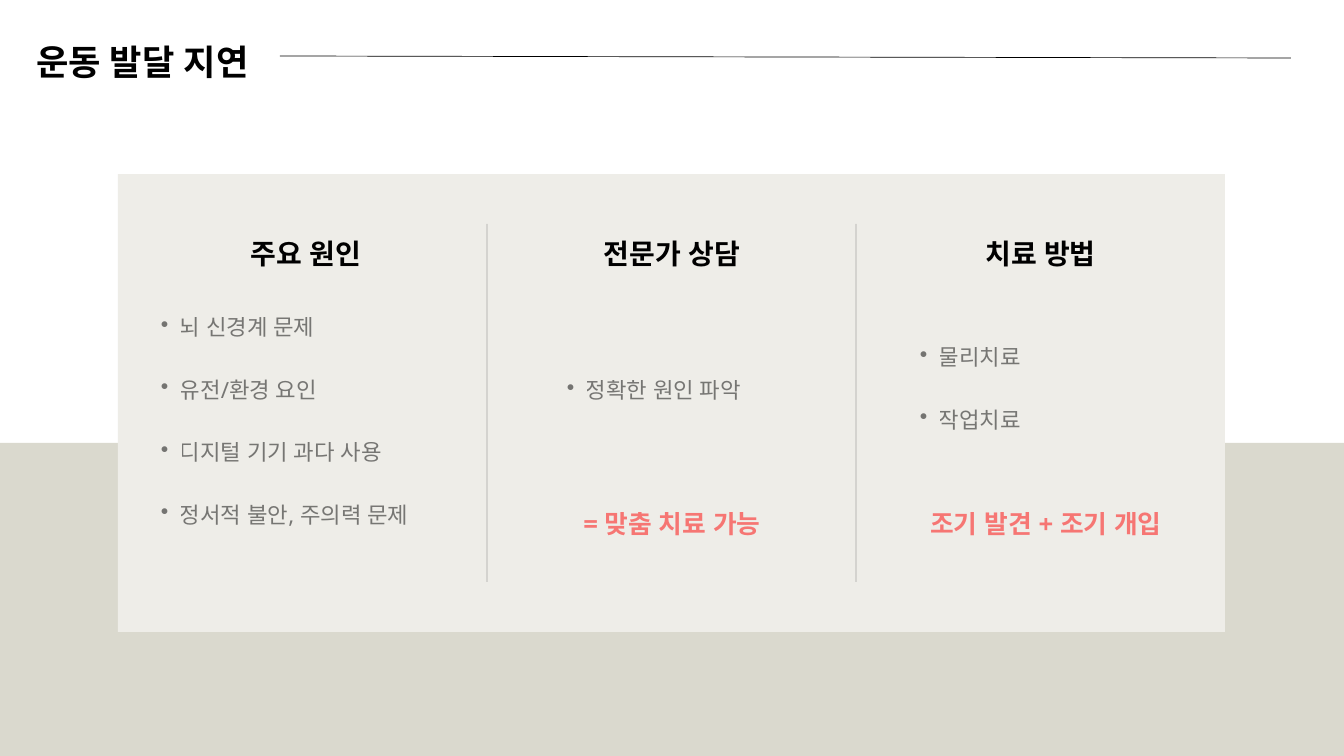
from lxml import etree
from pptx import Presentation
from pptx.dml.color import RGBColor
from pptx.enum.shapes import MSO_CONNECTOR, MSO_SHAPE
from pptx.enum.text import MSO_ANCHOR, MSO_AUTO_SIZE, PP_ALIGN
from pptx.oxml.ns import qn
from pptx.util import Pt

LEFT, MID = PP_ALIGN.LEFT, PP_ALIGN.CENTER
TOP, GROW = MSO_ANCHOR.TOP, MSO_AUTO_SIZE.SHAPE_TO_FIT_TEXT
RECT, LINE = MSO_SHAPE.RECTANGLE, MSO_CONNECTOR.STRAIGHT

# Content: each part holds its left, width and words; lists also hold a top
TITLE = "운동 발달 지연"
COLS = [
    {"head": (190, 232, "주요 원인"),
     "list": (142, 309, 343, ["뇌 신경계 문제", "유전/환경 요인",
                              "디지털 기기 과다 사용", "정서적 불안, 주의력 문제"])},
    {"head": (591, 162, "전문가 상담"),
     "list": (548, 372, 395, ["정확한 원인 파악"]),
     "gain": (516, 312, "= 맞춤 치료 가능")},
    {"head": (943, 195, "치료 방법"),
     "list": (901, 339, 368, ["물리치료", "작업치료"]),
     "gain": (890, 312, "조기 발견 + 조기 개입")},
]

# Theme: type styles are size, line pitch, colour, opacity, bold, alignment
THEME = {
    "font": "Noto Sans", "band": "DAD9CE", "card": "EEEDE8", "line": "000000",
    "title": (37.7, 52.8, "000000", 100, True, LEFT),
    "head": (30, 42, "000000", 100, True, MID),
    "list": (23.9, 33.5, "000000", 50, False, LEFT),
    "gain": (27.6, 38.6, "FF0000", 50, True, MID),
}

# Layout in px
WIDE, HIGH = 1344, 756
BAND_Y = 443
CARD = (118, 174, 1107, 458)
PAD = 50
HEAD_Y, HEAD_H = 231, 38
GAIN_Y, GAIN_H = 503, 34
INDENT, HANG = 38, 19


def px(num):
    return round(num * 914400 / 67.2)


def fade(fill, alpha):
    if alpha < 100:
        tint = fill.find(".//" + qn("a:srgbClr"))
        etree.SubElement(tint, qn("a:alpha"), val=str(alpha * 1000))


def block(box, tone):
    shape = slide.shapes.add_shape(RECT, *map(px, box))
    shape.shadow.inherit = False
    shape.fill.solid()
    shape.fill.fore_color.rgb = RGBColor.from_string(tone)
    shape.line.fill.background()


def rule(ends, alpha=100):
    line = slide.shapes.add_connector(LINE, *map(px, ends))
    line.line.width = Pt(0.75)
    line.line.color.rgb = RGBColor.from_string(THEME["line"])
    prop = line.line._get_or_add_ln()
    fade(prop, alpha)
    etree.SubElement(line._element.spPr, qn("a:effectLst"))


def write(shape, lines, kind, dots=False):
    size, pitch, tone, alpha, bold, align = THEME[kind]
    frame = shape.text_frame
    look = {"word_wrap": True, "auto_size": GROW, "vertical_anchor": TOP,
            "margin_left": 0, "margin_top": 0, "margin_right": 0, "margin_bottom": 0}
    for key, val in look.items():
        setattr(frame, key, val)
    for i, words in enumerate(lines):
        para = frame.add_paragraph() if i else frame.paragraphs[0]
        if dots:
            prop = para._p.get_or_add_pPr()
            prop.set("marL", str(px(INDENT)))
            prop.set("indent", str(-px(HANG)))
            etree.SubElement(prop, qn("a:buChar"), char="•")
        form = {"alignment": align, "line_spacing": Pt(pitch),
                "space_before": Pt(pitch if i else 0), "level": int(dots)}
        for key, val in form.items():
            setattr(para, key, val)
        run = para.add_run()
        run.text = words
        for key, val in {"size": Pt(size), "bold": bold, "name": THEME["font"]}.items():
            setattr(run.font, key, val)
        run.font.color.rgb = RGBColor.from_string(tone)
        mark = run._r.get_or_add_rPr()
        fade(mark, alpha)
        etree.SubElement(mark, qn("a:ea"), typeface=THEME["font"])


def label(box, lines, kind, dots=False):
    write(slide.shapes.add_textbox(*map(px, box)), lines, kind, dots)


deck = Presentation()
deck.slide_width, deck.slide_height = px(WIDE), px(HIGH)
slide = deck.slides.add_slide(deck.slide_layouts[5])

# Title and its rule
title = slide.shapes.title
for key, val in zip(("left", "top", "width", "height"), (36, 33, 267, 46)):
    setattr(title, key, px(val))
write(title, [TITLE], "title")
rule((280, 56, 1291, 58))

# Band, card and column dividers
block((0, BAND_Y, WIDE, HIGH - BAND_Y), THEME["band"])
block(CARD, THEME["card"])
left, top, wide, high = CARD
for i in range(1, len(COLS)):
    x = left + wide * i // len(COLS)
    rule((x, top + PAD, x, top + high - PAD), 30)

# Columns
for col in COLS:
    x, w, words = col["head"]
    label((x, HEAD_Y, w, HEAD_H), [words], "head")
    x, y, w, items = col["list"]
    tall = round((2 * len(items) - 1) * THEME["list"][1] * 67.2 / 72)
    label((x, y, w, tall), items, "list", dots=True)
    if "gain" in col:
        x, w, words = col["gain"]
        label((x, GAIN_Y, w, GAIN_H), [words], "gain")

deck.save("out.pptx")
